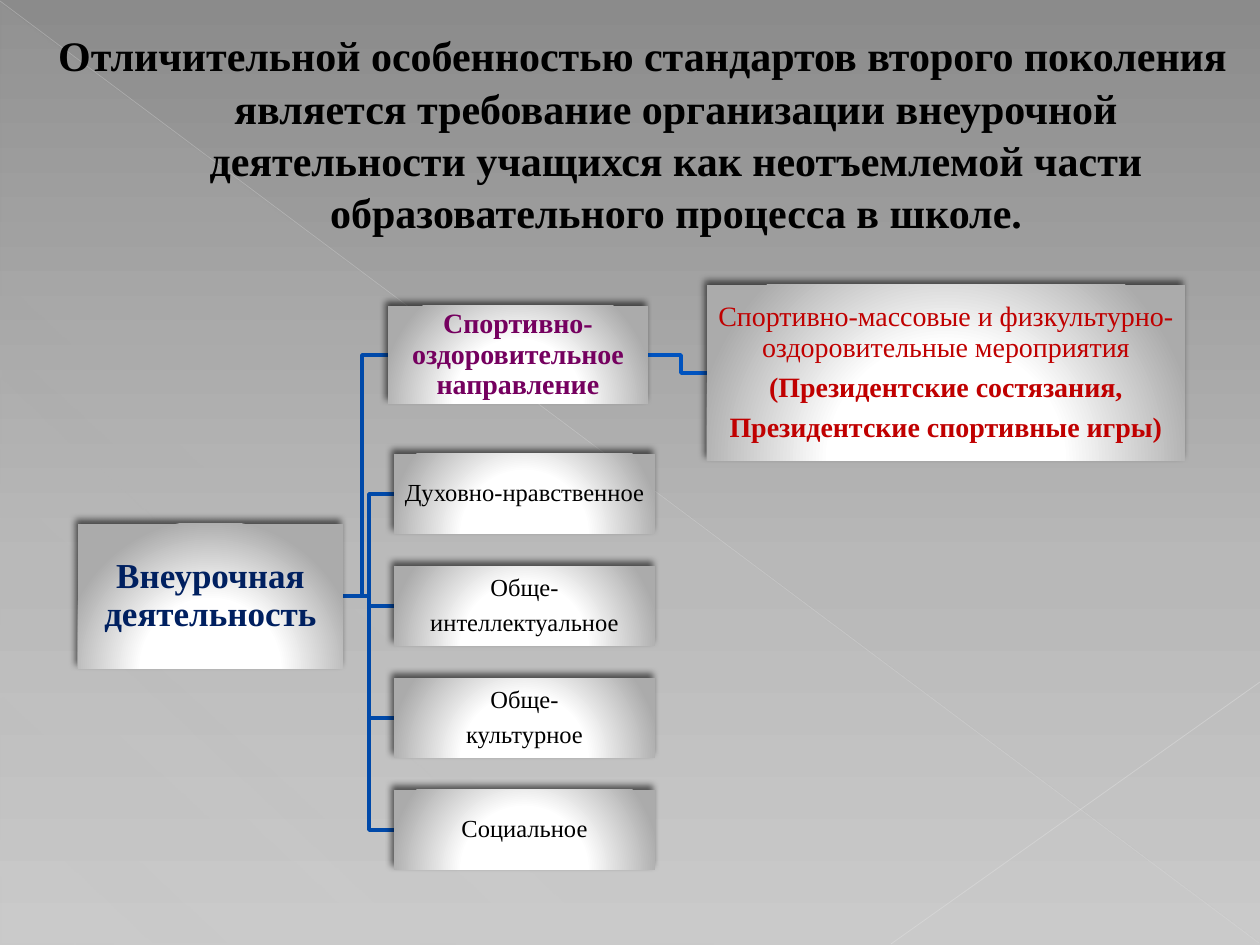
from dataclasses import dataclass

from lxml import etree
from pptx import Presentation
from pptx import util as u
from pptx.dml.color import RGBColor
from pptx.enum import shapes, text
from pptx.oxml.ns import qn

EMU_PER_PX = 914400 / 126


def px(length: int) -> u.Emu:
    return u.Emu(round(length * EMU_PER_PX))


@dataclass(frozen=True)
class Theme:
    font: str = "Times New Roman"
    ink: str = "000000"
    root_ink: str = "002060"
    sport_ink: str = "75005F"
    event_ink: str = "C00000"
    branch: str = "0049A9"
    event_branch: str = "0053BF"
    backdrop: tuple = ((0, "8B8B8B", 100), (60, "B8B8B8", 100), (100, "CACACA", 100))
    veil: tuple = ((0, "D2D2D2", 10), (70, "D2D2D2", 8), (100, "D2D2D2", 1))
    glow: tuple = ((0, "FFFFFF", 100), (46, "FFFFFF", 100), (100, "ABABAB", 100))
    title_size: int = 24
    root_size: int = 20
    sport_size: int = 16
    direction_size: int = 14


@dataclass(frozen=True)
class Box:
    left: int
    top: int
    width: int
    height: int
    lines: tuple[str, ...]
    size: int
    color: str
    bold: tuple[bool, ...]

    @property
    def right(self) -> int:
        return self.left + self.width

    @property
    def middle(self) -> int:
        return self.top + self.height // 2


@dataclass(frozen=True)
class Branch:
    parent: Box
    child: Box
    bend: int
    color: str


@dataclass(frozen=True)
class Ray:
    start: tuple[int, int]
    end: tuple[int, int]
    color: str
    width: float
    opacity: int


THEME = Theme()
TITLE = (
    "Отличительной особенностью стандартов второго поколения является требование "
    "организации внеурочной деятельности учащихся как неотъемлемой части "
    "образовательного процесса в школе."
)
ROOT = Box(78, 524, 265, 145, ("Внеурочная деятельность",),
           THEME.root_size, THEME.root_ink, (True,))
SPORT = Box(388, 306, 260, 98, ("Спортивно-оздоровительное направление",),
            THEME.sport_size, THEME.sport_ink, (True,))
EVENTS = Box(707, 285, 478, 176,
             ("Спортивно-массовые и физкультурно-оздоровительные мероприятия",
              "(Президентские состязания,", "Президентские спортивные игры)"),
             THEME.sport_size, THEME.event_ink, (False, True, True))
DIRECTION_LINES = (("Духовно-нравственное",), ("Обще-", "интеллектуальное"),
                   ("Обще-", "культурное"), ("Социальное",))
DIRECTIONS = [
    Box(394, 454 + 112 * row, 261, 80, lines, THEME.direction_size, THEME.ink,
        (False,) * len(lines))
    for row, lines in enumerate(DIRECTION_LINES)
]
BRANCHES = [
    *(Branch(ROOT, direction, 369, THEME.branch) for direction in reversed(DIRECTIONS)),
    Branch(SPORT, EVENTS, 681, THEME.event_branch),
    Branch(ROOT, SPORT, 362, THEME.branch),
]
RAYS = (
    Ray((0, 1), (1259, 943), "DFDFDF", 0.39, 35),
    Ray((1260, 682), (891, 944), "E2E2E2", 0.47, 45),
)


def add_color(parent, color: str, opacity: int) -> None:
    tone = etree.SubElement(parent, qn("a:srgbClr"), val=color)
    if opacity < 100:
        etree.SubElement(tone, qn("a:alpha"), val=str(opacity * 1000))


def set_gradient(filled, stops: tuple, angle: int | None = None) -> None:
    filled.fill.solid()
    filled.fill.fore_color.rgb = RGBColor.from_string(stops[0][1])


def swap_in_gradient(holder, stops: tuple, angle: int | None = None) -> None:
    solid = holder.find(qn("a:solidFill"))
    gradient = etree.Element(qn("a:gradFill"), rotWithShape="1")
    stop_list = etree.SubElement(gradient, qn("a:gsLst"))
    for position, color, opacity in stops:
        stop = etree.SubElement(stop_list, qn("a:gs"), pos=str(position * 1000))
        add_color(stop, color, opacity)
    if angle is None:
        circle = etree.SubElement(gradient, qn("a:path"), path="circle")
        etree.SubElement(circle, qn("a:fillToRect"), l="50000", t="155000",
                         r="50000", b="-55000")
    else:
        etree.SubElement(gradient, qn("a:lin"), ang=str(angle * 60000), scaled="0")
    holder.replace(solid, gradient)


def draw_backdrop(slide) -> None:
    slide.background.fill.solid()
    swap_in_gradient(slide.element.find(".//" + qn("p:bgPr")), THEME.backdrop, 90)
    veil = slide.shapes.add_shape(shapes.MSO_SHAPE.RIGHT_TRIANGLE,
                                  px(1), px(3), px(1259), px(942))
    veil.fill.solid()
    swap_in_gradient(veil.element.spPr, THEME.veil, 133)
    veil.line.fill.background()
    veil.shadow.inherit = False


def draw_ray(slide, ray: Ray) -> None:
    line = slide.shapes.add_connector(shapes.MSO_CONNECTOR.STRAIGHT,
                                      *map(px, ray.start + ray.end))
    line.line.width = u.Pt(ray.width)
    line.line.color.rgb = RGBColor.from_string(ray.color)
    tone = line.element.spPr.find(".//" + qn("a:srgbClr"))
    etree.SubElement(tone, qn("a:alpha"), val=str(ray.opacity * 1000))
    etree.SubElement(line.element.spPr, qn("a:effectLst"))


def draw_branch(slide, branch: Branch) -> None:
    start, end = branch.parent, branch.child
    outline = slide.shapes.build_freeform(start.right, start.middle, scale=EMU_PER_PX)
    outline.add_line_segments(
        [(branch.bend, start.middle), (branch.bend, end.middle), (end.left, end.middle)],
        close=False)
    elbow = outline.convert_to_shape()
    elbow.fill.background()
    elbow.line.color.rgb = RGBColor.from_string(branch.color)
    elbow.line.width = u.Pt(2)
    elbow.shadow.inherit = False


def style_font(font, size: int, color: str, bold: bool) -> None:
    font.name = THEME.font
    font.size = u.Pt(size)
    font.bold = bold
    font.color.rgb = RGBColor.from_string(color)


def draw_box(slide, box: Box) -> None:
    panel = slide.shapes.add_shape(shapes.MSO_SHAPE.RECTANGLE, px(box.left), px(box.top),
                                   px(box.width), px(box.height))
    panel.fill.solid()
    swap_in_gradient(panel.element.spPr, THEME.glow)
    panel.line.fill.background()
    panel.shadow.inherit = False
    shadow = etree.SubElement(
        panel.element.spPr.find(qn("a:effectLst")), qn("a:outerShdw"),
        blurRad=str(u.Pt(4)), dist=str(u.Pt(3)), dir=str(245 * 60000), rotWithShape="0")
    add_color(shadow, THEME.ink, 60)
    frame = panel.text_frame
    frame.word_wrap = True
    frame.vertical_anchor = text.MSO_ANCHOR.MIDDLE
    frame.margin_left = frame.margin_right = frame.margin_top = frame.margin_bottom = px(1)
    for index, (line, bold) in enumerate(zip(box.lines, box.bold)):
        paragraph = frame.add_paragraph() if index else frame.paragraphs[0]
        paragraph.text = line
        paragraph.alignment = text.PP_ALIGN.CENTER
        paragraph.line_spacing = 0.9
        paragraph.space_after = u.Pt(0)
        after = paragraph._p.pPr.find(qn("a:spcAft"))
        after.remove(after[0])
        etree.SubElement(after, qn("a:spcPct"), val="35000")
        style_font(paragraph.font, box.size, box.color, bold)


def place_title(slide) -> None:
    title = slide.shapes.title
    title.left, title.top, title.width, title.height = map(px, (25, 36, 1235, 193))
    frame = title.text_frame
    frame.text = TITLE
    frame.word_wrap = True
    frame.auto_size = text.MSO_AUTO_SIZE.NONE
    frame.vertical_anchor = text.MSO_ANCHOR.MIDDLE
    paragraph = frame.paragraphs[0]
    paragraph.alignment = text.PP_ALIGN.CENTER
    paragraph.line_spacing = 1.04
    properties = paragraph._p.get_or_add_pPr()
    properties.set("marL", str(px(67)))
    properties.set("indent", str(px(-67)))
    style_font(paragraph.font, THEME.title_size, THEME.ink, True)
    title.element.getparent().append(title.element)


def main() -> None:
    deck = Presentation()
    deck.slide_width, deck.slide_height = px(1260), px(945)
    slide = deck.slides.add_slide(deck.slide_layouts[5])
    draw_backdrop(slide)
    for ray in RAYS:
        draw_ray(slide, ray)
    for branch in BRANCHES:
        draw_branch(slide, branch)
    for box in (ROOT, SPORT, EVENTS, *DIRECTIONS):
        draw_box(slide, box)
    place_title(slide)
    deck.save("out.pptx")


if __name__ == "__main__":
    main()
